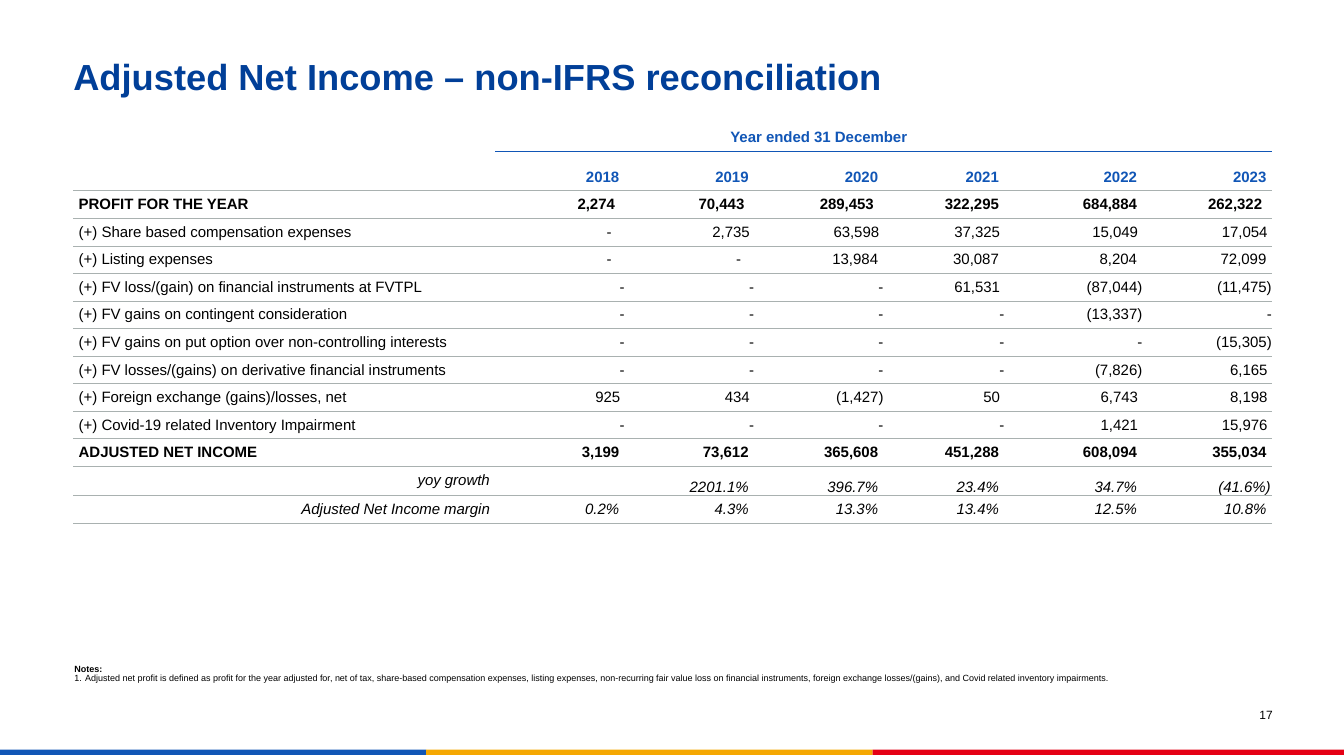
import dataclasses
import typing

import lxml.etree
import pptx
import pptx.dml.color
import pptx.enum.shapes
import pptx.enum.text
import pptx.oxml.ns
import pptx.util

PX = 9144  # EMU per px, 100 px to the inch
ALIGN = pptx.enum.text.PP_ALIGN
ANCHOR = pptx.enum.text.MSO_ANCHOR
NO_STYLE = "{2D5ABB26-0587-4C30-8999-92F81FD0307C}"


@dataclasses.dataclass(frozen=True)
class Theme:
    font: str = "Arial"
    title_color: str = "013F98"
    blue: str = "1156B6"
    amber: str = "F5A802"
    red: str = "E50014"
    rule: str = "A9B1B0"
    ink: str = "000000"
    title_size: float = 24.2
    table_size: float = 10
    page_size: float = 8
    note_size: float = 6


@dataclasses.dataclass(frozen=True)
class Line:
    label: str
    values: str  # one value per year, separated by spaces
    bold: bool = False
    italic: bool = False
    label_align: typing.Any = ALIGN.LEFT
    anchor: typing.Any = ANCHOR.MIDDLE
    gaps: tuple = ()  # right insets in px, where they differ from the rule


@dataclasses.dataclass(frozen=True)
class Band:
    left: int
    right: int
    color: str


THEME = Theme()
WIDTH, HEIGHT = 1246, 700
COLUMNS = (391, 120, 120, 120, 112, 128, 120)
ROW, YEAR_ROW = 23, 37
INSET = 5
YEARS = range(2018, 2024)

LINES = (
    Line("PROFIT FOR THE YEAR", "2,274 70,443 289,453 322,295 684,884 262,322",
         bold=True, gaps=(9, 9, 9, 5, 5, 9)),
    Line("(+) Share based compensation expenses", "- 2,735 63,598 37,325 15,049 17,054",
         gaps=(12, 4, 4, 4, 4, 4)),
    Line("(+) Listing expenses", "- - 13,984 30,087 8,204 72,099",
         gaps=(12, 12, 5, 5, 5, 5)),
    Line("(+) FV loss/(gain) on financial instruments at FVTPL",
         "- - - 61,531 (87,044) (11,475)"),
    Line("(+) FV gains on contingent consideration", "- - - - (13,337) -"),
    Line("(+) FV gains on put option over non-controlling interests", "- - - - - (15,305)"),
    Line("(+) FV losses/(gains) on derivative financial instruments", "- - - - (7,826) 6,165"),
    Line("(+) Foreign exchange (gains)/losses, net", "925 434 (1,427) 50 6,743 8,198"),
    Line("(+) Covid-19 related Inventory Impairment", "- - - - 1,421 15,976"),
    Line("ADJUSTED NET INCOME", "3,199 73,612 365,608 451,288 608,094 355,034",
         bold=True, gaps=(5,) * 6),
    Line("yoy growth", "2201.1% 396.7% 23.4% 34.7% (41.6%)", italic=True,
         label_align=ALIGN.RIGHT, anchor=ANCHOR.BOTTOM, gaps=(5, 5, 5, 5, 1)),
    Line("Adjusted Net Income margin", "0.2% 4.3% 13.3% 13.4% 12.5% 10.8%", italic=True,
         label_align=ALIGN.RIGHT, gaps=(5,) * 6),
)
BANDS = (Band(0, 395, THEME.blue), Band(395, 809, THEME.amber), Band(809, WIDTH, THEME.red))


def apply(target: typing.Any, values: dict) -> None:
    for name, value in values.items():
        setattr(target, name, value)


def margins(left: int, top: int, right: int, bottom: int) -> dict:
    return {"margin_left": left * PX, "margin_top": top * PX,
            "margin_right": right * PX, "margin_bottom": bottom * PX}


def write(paragraph: typing.Any, text: str, size: float, color: str,
          bold: bool = False, italic: bool = False, **layout: typing.Any) -> None:
    apply(paragraph, layout)
    run = paragraph.add_run()
    run.text = text
    apply(run.font, {"name": THEME.font, "size": pptx.util.Pt(size),
                     "bold": bold, "italic": italic})
    run.font.color.rgb = pptx.dml.color.RGBColor.from_string(color)


def add_text_frame(slide: typing.Any, box: tuple, insets: tuple, anchor: typing.Any) -> typing.Any:
    frame = slide.shapes.add_textbox(*(length * PX for length in box)).text_frame
    apply(frame, {"word_wrap": True, "vertical_anchor": anchor, **margins(*insets)})
    return frame


def add_band(slide: typing.Any, band: Band) -> None:
    bar = slide.shapes.add_shape(pptx.enum.shapes.MSO_SHAPE.RECTANGLE, band.left * PX, 695 * PX,
                                 (band.right - band.left) * PX, 5 * PX)
    bar.shadow.inherit = False
    bar.fill.solid()
    bar.fill.fore_color.rgb = pptx.dml.color.RGBColor.from_string(band.color)
    bar.line.fill.background()


def set_rules(cell: typing.Any, rules: dict) -> None:
    """Give a cell its top (lnT) and bottom (lnB) rules as (colour, points)."""
    properties = cell._tc.get_or_add_tcPr()
    for tag, (color, points) in rules.items():
        line = lxml.etree.SubElement(properties, pptx.oxml.ns.qn(f"a:{tag}"),
                                     w=str(pptx.util.Pt(points)))
        fill = lxml.etree.SubElement(line, pptx.oxml.ns.qn("a:solidFill"))
        lxml.etree.SubElement(fill, pptx.oxml.ns.qn("a:srgbClr"), val=color)
    cell.fill.background()


def rules_for(row: int, column: int) -> dict:
    """Rules above and below a cell; the blue one skips the label column."""
    levels = {1: (THEME.blue, 0.5) if column else None, 2: (THEME.rule, 1)}
    above = levels.get(row, (THEME.rule, 0.5)) if row else None
    below = levels.get(row + 1, (THEME.rule, 0.5))
    return {tag: rule for tag, rule in (("lnT", above), ("lnB", below)) if rule}


def fill_cell(cell: typing.Any, text: str, color: str, insets: tuple, anchor: typing.Any,
              **style: typing.Any) -> None:
    apply(cell, {"vertical_anchor": anchor, **margins(*insets)})
    write(cell.text_frame.paragraphs[0], text, THEME.table_size, color, **style)


def add_line(table: typing.Any, row: int, line: Line) -> None:
    style = {"bold": line.bold, "italic": line.italic}
    fill_cell(table.cell(row, 0), line.label, THEME.ink, (INSET,) * 4, ANCHOR.MIDDLE,
              alignment=line.label_align, **style)
    values = line.values.split()
    gaps = line.gaps or [0 if value[-1] in "-)" else 4 for value in values]
    first = len(COLUMNS) - len(values)
    for column, (value, gap) in enumerate(zip(values, gaps), first):
        fill_cell(table.cell(row, column), value, THEME.ink, (0, 0, gap, 0), line.anchor,
                  alignment=ALIGN.RIGHT, **style)


def add_reconciliation(slide: typing.Any) -> None:
    heights = [ROW, YEAR_ROW] + [ROW] * len(LINES)
    table = slide.shapes.add_table(len(heights), len(COLUMNS), 68 * PX, 113 * PX,
                                   sum(COLUMNS) * PX, sum(heights) * PX).table
    apply(table, {"first_row": False, "horz_banding": False})
    table._tbl.tblPr.find(pptx.oxml.ns.qn("a:tableStyleId")).text = NO_STYLE
    for column, width in zip(table.columns, COLUMNS):
        column.width = width * PX
    for row, height in enumerate(heights):
        table.rows[row].height = height * PX
        for column in range(len(COLUMNS)):
            cell = table.cell(row, column)
            set_rules(cell, rules_for(row, column))
            # Blank cells keep the table's type size, so rows stay low
            end = cell.text_frame.paragraphs[0]._p.get_or_add_endParaRPr()
            end.set("sz", str(int(THEME.table_size * 100)))

    # Header rows
    header = {"color": THEME.blue, "insets": (INSET,) * 4, "anchor": ANCHOR.BOTTOM, "bold": True}
    table.cell(0, 1).merge(table.cell(0, 5))
    fill_cell(table.cell(0, 1), "Year ended 31 December", alignment=ALIGN.CENTER, **header)
    for column, year in enumerate(YEARS, 1):
        fill_cell(table.cell(1, column), str(year), alignment=ALIGN.RIGHT, **header)

    # Body rows
    for row, line in enumerate(LINES, 2):
        add_line(table, row, line)


def add_notes(slide: typing.Any) -> None:
    notes = add_text_frame(slide, (69, 611, 1109, 28), (0, 5, 10, 5), ANCHOR.BOTTOM)
    write(notes.paragraphs[0], "Notes:", THEME.note_size, THEME.ink, bold=True, line_spacing=0.9)
    definition = notes.add_paragraph()
    write(definition, "Adjusted net profit is defined as profit for the year adjusted for, net of "
          "tax, share-based compensation expenses, listing expenses, non-recurring fair value loss "
          "on financial instruments, foreign exchange losses/(gains), and Covid related inventory "
          "impairments.", THEME.note_size, THEME.ink, line_spacing=0.9)
    properties = definition._p.get_or_add_pPr()
    for name, value in {"marL": 10 * PX, "indent": -10 * PX}.items():
        properties.set(name, str(value))
    lxml.etree.SubElement(properties, pptx.oxml.ns.qn("a:buAutoNum"), type="arabicPeriod")


def main() -> None:
    deck = pptx.Presentation()
    apply(deck, {"slide_width": WIDTH * PX, "slide_height": HEIGHT * PX})
    slide = deck.slides.add_slide(deck.slide_layouts[6])

    # Footer bands
    for band in BANDS:
        add_band(slide, band)

    # Table, title, notes and page number
    add_reconciliation(slide)
    title = add_text_frame(slide, (68, 53, 1110, 35), (0, 5, 5, 0), ANCHOR.MIDDLE)
    write(title.paragraphs[0], "Adjusted Net Income – non-IFRS reconciliation",
          THEME.title_size, THEME.title_color, bold=True, line_spacing=0.9)
    add_notes(slide)
    page = add_text_frame(slide, (1152, 656, 28, 12), (0, 0, 0, 0), ANCHOR.TOP)
    write(page.paragraphs[0], "17", THEME.page_size, THEME.ink, alignment=ALIGN.RIGHT)

    deck.save("out.pptx")


if __name__ == "__main__":
    main()
